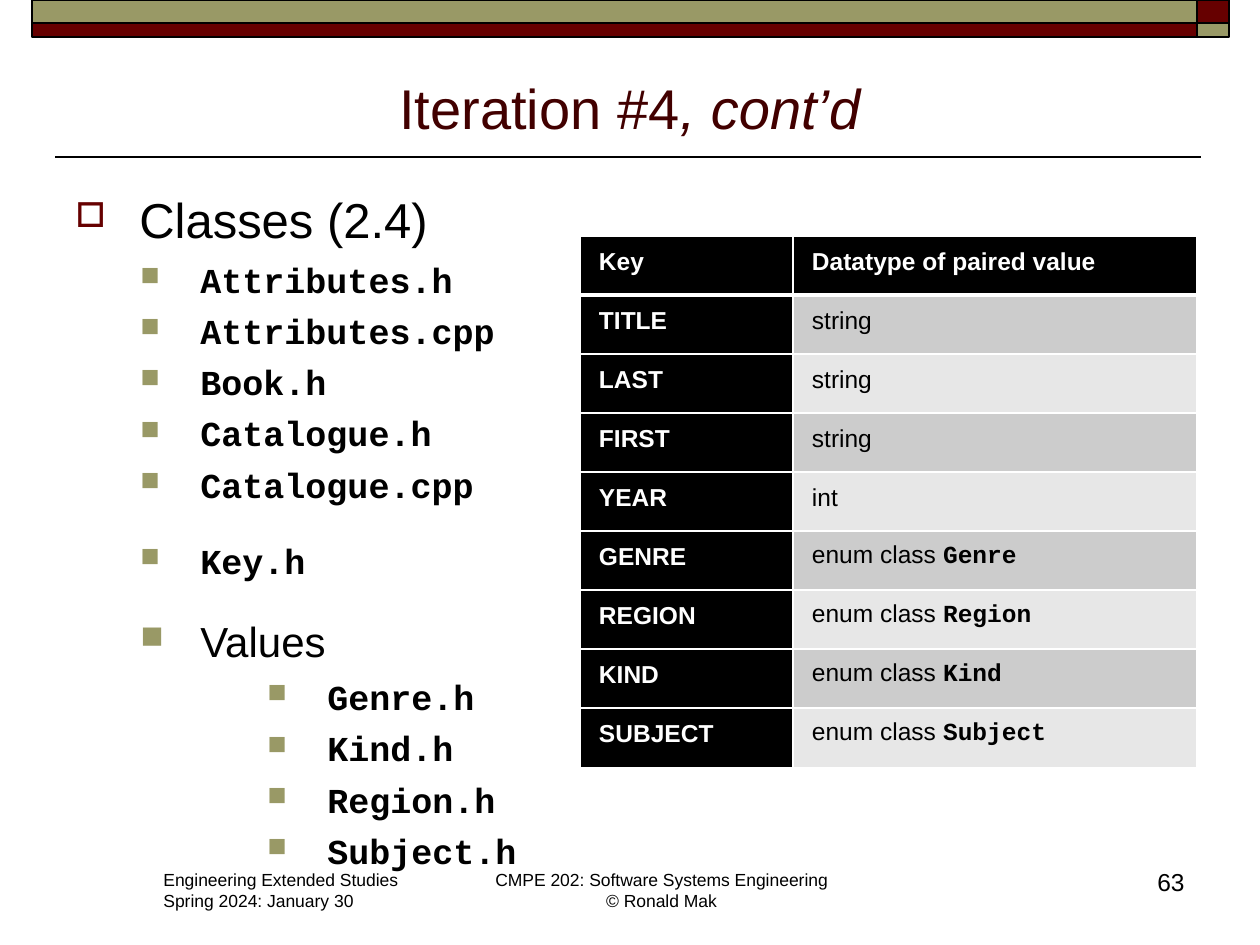
import pptx
import pptx.dml.color
import pptx.enum.shapes
import pptx.enum.text
import pptx.oxml
import pptx.oxml.ns
import pptx.util

SCALE = 914400 / 126
MAROON, OLIVE, BLACK, WHITE = "660000", "999966", "000000", "FFFFFF"
SANS, MONO = "Arial", "Courier New"
ALIGN = pptx.enum.text.PP_ALIGN
ANCHOR = pptx.enum.text.MSO_ANCHOR


def px(length):
    return pptx.util.Emu(round(length * SCALE))


def rgb(value):
    return pptx.dml.color.RGBColor.from_string(value)


def element(xml):
    head, tail = xml.split(" ", 1) if " " in xml else (xml[:-2], "/>")
    return pptx.oxml.parse_xml(f"{head} {pptx.oxml.ns.nsdecls('a')} {tail}")


def add_run(paragraph, text, size, color=BLACK, face=SANS, bold=False, italic=False):
    run = paragraph.add_run()
    run.text = text
    run.font.size = pptx.util.Pt(size)
    run.font.name = face
    run.font.bold = bold
    run.font.italic = italic
    run.font.color.rgb = rgb(color)


def add_frame(slide, box, wrap=True, anchor=ANCHOR.TOP):
    frame = slide.shapes.add_textbox(*map(px, box)).text_frame
    frame.word_wrap = wrap
    frame.vertical_anchor = anchor
    return frame


def add_bullet(paragraph, mark, color, percent, left, hang):
    properties = paragraph._p.get_or_add_pPr()
    properties.set("marL", str(px(left)))
    properties.set("indent", str(-px(hang)))
    properties.append(element(f'<a:buClr ><a:srgbClr val="{color}"/></a:buClr>'))
    properties.append(element(f'<a:buSzPct val="{percent * 1000}"/>'))
    properties.append(element(f'<a:buChar char="{mark}"/>'))


def add_banner(slide, box):
    left, top, width, height = box
    upper, corner = 23, 32
    for row_top, row_height, main, accent in (
        (0, upper, OLIVE, MAROON),
        (upper, height - upper, MAROON, OLIVE),
    ):
        for x, part_width, color in (
            (0, width - corner, main),
            (width - corner, corner, accent),
        ):
            bar = slide.shapes.add_shape(
                pptx.enum.shapes.MSO_SHAPE.RECTANGLE,
                px(left + x), px(top + row_top), px(part_width), px(row_height),
            )
            bar.shadow.inherit = False
            bar.fill.solid()
            bar.fill.fore_color.rgb = rgb(color)
            bar.line.color.rgb = rgb(BLACK)
            bar.line.width = pptx.util.Pt(1)


def add_heading(slide, box):
    left, top, width, height = box
    heading = add_frame(slide, box, anchor=ANCHOR.BOTTOM).paragraphs[0]
    heading.alignment = ALIGN.CENTER
    add_run(heading, "Iteration #4", 32, "420000")
    add_run(heading, ", cont’d", 32, "420000", italic=True)
    rule_y = px(top + height + 10)
    rule = slide.shapes.add_connector(
        pptx.enum.shapes.MSO_CONNECTOR.STRAIGHT,
        px(left + width + 4), rule_y, px(left - 8), rule_y,
    )
    rule.line.color.rgb = rgb(BLACK)
    rule.line.width = pptx.util.Pt(1)
    rule._element.spPr.append(element("<a:effectLst/>"))


def add_outline(slide, box):
    files = ("Attributes.h", "Attributes.cpp", "Book.h", "Catalogue.h", "Catalogue.cpp")
    values = ("Genre.h", "Kind.h", "Region.h", "Subject.h")
    items = [
        *((1, name, 5.3, 20, MONO) for name in files),
        (1, "Key.h", 19.6, 20, MONO),
        (1, "Values", 19.6, 24, SANS),
        *((3, name, 5.3, 20, MONO) for name in values),
    ]
    frame = add_frame(slide, box)
    frame.margin_top = px(11)
    classes = frame.paragraphs[0]
    add_bullet(classes, "□", MAROON, 70, 64, 64)
    add_run(classes, "Classes (2.4)", 28)
    for level, text, gap, size, face in items:
        item = frame.add_paragraph()
        item.level = level
        item.space_before = pptx.util.Pt(gap)
        add_bullet(item, "■", OLIVE, 75, {1: 125, 3: 252}[level], 60)
        add_run(item, text, size, face=face, bold=face == MONO)


def style_cell(cell, row, fill):
    properties = cell._tc.get_or_add_tcPr()
    for side in "LRTB":
        heavy = (row, side) in ((0, "B"), (1, "T"))
        properties.append(element(
            f'<a:ln{side} w="{38100 if heavy else 12700}"><a:solidFill>'
            f'<a:srgbClr val="{WHITE}"/></a:solidFill></a:ln{side}>'
        ))
    cell.fill.solid()
    cell.fill.fore_color.rgb = rgb(fill)
    cell.margin_left = cell.margin_right = px(19)
    cell.margin_top = cell.margin_bottom = px(19)
    paragraph = cell.text_frame.paragraphs[0]
    paragraph.line_spacing = pptx.util.Pt(12)
    return paragraph


def add_key_table(slide, box):
    left, top, width, height = box
    rows = [
        ("Key", "Datatype of paired value"),
        ("TITLE", "string"),
        ("LAST", "string"),
        ("FIRST", "string"),
        ("YEAR", "int"),
        *((name.upper(), "enum class ", name)
          for name in ("Genre", "Region", "Kind", "Subject")),
    ]
    table = slide.shapes.add_table(len(rows), 2, *map(px, box)).table
    key_width = 213
    table.columns[0].width = px(key_width)
    table.columns[1].width = px(width - key_width)
    for row, (key, datatype, *enum_name) in enumerate(rows):
        table.rows[row].height = px(height // len(rows))
        key_cell = style_cell(table.cell(row, 0), row, BLACK)
        add_run(key_cell, key, 14, WHITE, bold=True)
        header = row == 0
        band = BLACK if header else ("E7E7E7", "CCCCCC")[row % 2]
        datatype_cell = style_cell(table.cell(row, 1), row, band)
        add_run(datatype_cell, datatype, 14, WHITE if header else BLACK, bold=header)
        for name in enum_name:
            add_run(datatype_cell, name, 14, face=MONO, bold=True)


def add_footer(slide, box):
    left, top, width, height = box
    for x, note_width, align, lines in (
        (0, 261, ALIGN.LEFT, ("Engineering Extended Studies", "Spring 2024: January 30")),
        (328, 365, ALIGN.CENTER,
         ("CMPE 202: Software Systems Engineering", "© Ronald Mak")),
    ):
        frame = add_frame(slide, (left + x, top, note_width, 55), wrap=False)
        for index, line in enumerate(lines):
            note = frame.add_paragraph() if index else frame.paragraphs[0]
            note.alignment = align
            add_run(note, line, 10)
    number_width = 101
    number_box = (left + width - number_width, top - 2, number_width, height)
    number = add_frame(slide, number_box).paragraphs[0]
    number.alignment = ALIGN.RIGHT
    add_run(number, "63", 14)


def main():
    deck = pptx.Presentation()
    deck.slide_width, deck.slide_height = px(1260), px(945)
    slide = deck.slides.add_slide(deck.slide_layouts[6])
    add_banner(slide, (32, 0, 1197, 37))
    add_heading(slide, (63, 57, 1134, 90))
    add_outline(slide, (63, 179, 1134, 683))
    add_key_table(slide, (580, 236, 617, 522))
    add_footer(slide, (151, 863, 1046, 63))
    deck.save("out.pptx")


if __name__ == "__main__":
    main()
